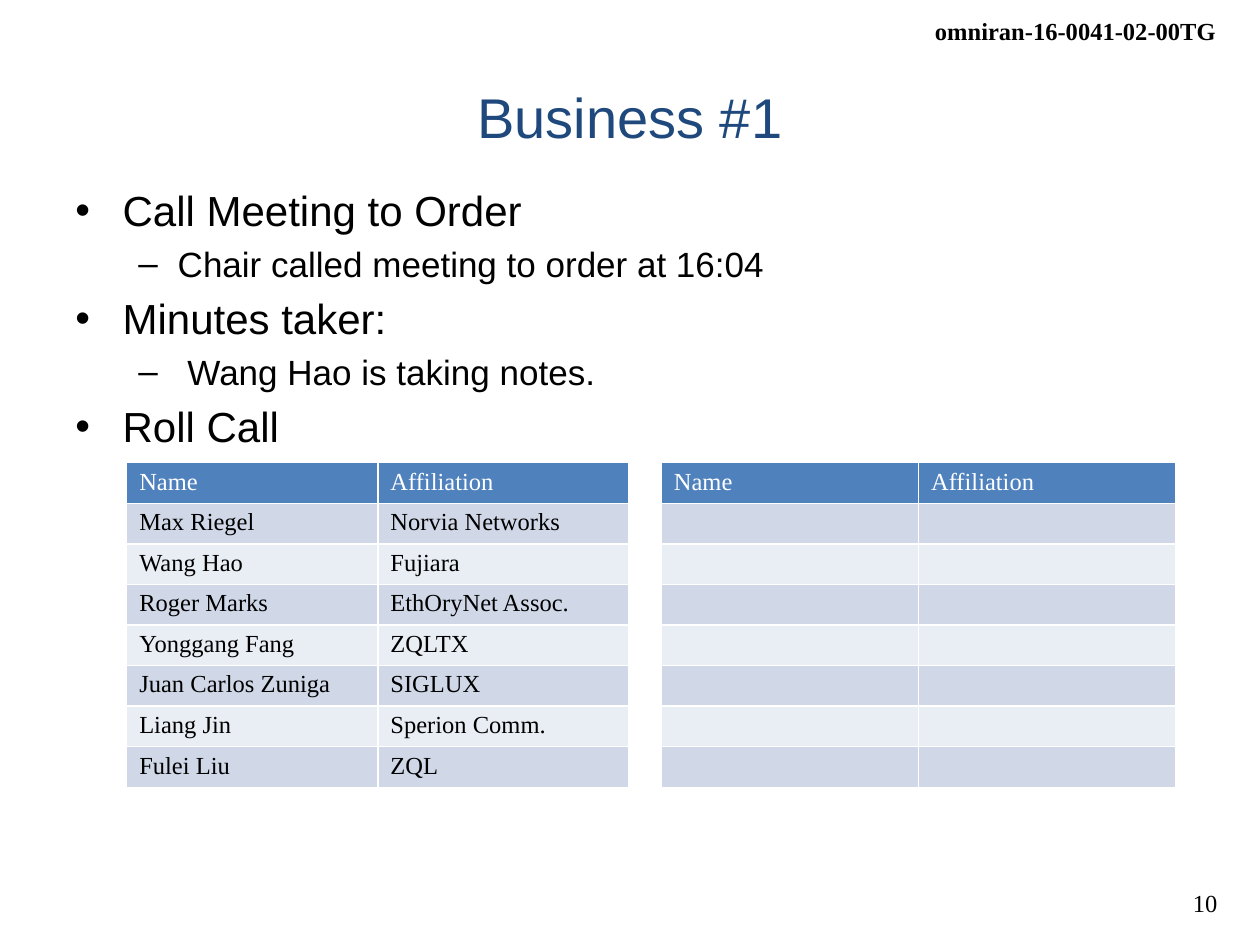
from lxml import etree
from pptx import Presentation
from pptx import util as u
from pptx.dml import color
from pptx.enum import text
from pptx.oxml import ns


def rgb(value):
    return color.RGBColor.from_string(value)


def write(paragraph, content, size=14, font="Times New Roman", fill="000000",
          bold=False, align=text.PP_ALIGN.LEFT):
    paragraph.alignment = align
    run = paragraph.add_run()
    run.text = content
    run.font.size = u.Pt(size)
    run.font.name = font
    run.font.bold = bold
    run.font.color.rgb = rgb(fill)


presentation = Presentation()
presentation.slide_width = u.Pt(720)
presentation.slide_height = u.Pt(540)
slide = presentation.slides.add_slide(presentation.slide_layouts[5])

title = slide.shapes.title
title.left, title.top, title.width, title.height = u.Pt(36), u.Pt(21.6), u.Pt(648), u.Pt(90)
title.text_frame.vertical_anchor = text.MSO_ANCHOR.MIDDLE
write(title.text_frame.paragraphs[0], "Business #1", size=32, font="Arial",
      fill="1F497D", align=text.PP_ALIGN.CENTER)

for content, left, top, width, bold in [
    ("omniran-16-0041-02-00TG", 525.6, 5.8, 176.4, True),
    ("10", 671.8, 504, 31, False),
]:
    box = slide.shapes.add_textbox(u.Pt(left), u.Pt(top), u.Pt(width), u.Pt(24.5))
    box.text_frame.word_wrap = False
    write(box.text_frame.paragraphs[0], content, bold=bold, align=text.PP_ALIGN.RIGHT)

agenda = slide.shapes.add_textbox(u.Pt(36), u.Pt(102.2), u.Pt(648), u.Pt(203.8))
agenda.text_frame.word_wrap = True
levels = [("•", 24, 27, -27), ("–", 20, 58.5, -22.5)]
agenda_items = [
    (0, "Call Meeting to Order"),
    (1, "Chair called meeting to order at 16:04"),
    (0, "Minutes taker:"),
    (1, " Wang Hao is taking notes."),
    (0, "Roll Call"),
]
for index, (level, content) in enumerate(agenda_items):
    frame = agenda.text_frame
    paragraph = frame.add_paragraph() if index else frame.paragraphs[0]
    bullet, size, margin, indent = levels[level]
    paragraph.level = level
    paragraph.space_before = u.Pt(size * 0.2)
    write(paragraph, content, size=size, font="Arial")
    properties = paragraph._p.get_or_add_pPr()
    properties.set("marL", str(u.Pt(margin)))
    properties.set("indent", str(u.Pt(indent)))
    etree.SubElement(properties, ns.qn("a:buFont"), typeface="Arial")
    etree.SubElement(properties, ns.qn("a:buChar"), char=bullet)

attendees = [
    ("Max Riegel", "Norvia Networks"),
    ("Wang Hao", "Fujiara"),
    ("Roger Marks", "EthOryNet Assoc."),
    ("Yonggang Fang", "ZQLTX"),
    ("Juan Carlos Zuniga", "SIGLUX"),
    ("Liang Jin", "Sperion Comm."),
    ("Fulei Liu", "ZQL"),
]
header = ("Name", "Affiliation")
rows = [header + ("",) + header] + [person + ("",) * 3 for person in attendees]
column_widths = [143.5, 143.5, 18.5, 147, 147]
row_height = 22.9
gap_column = 2

roll_call = slide.shapes.add_table(
    len(rows), len(column_widths), u.Pt(72.4), u.Pt(264.4),
    u.Pt(sum(column_widths)), u.Pt(row_height * len(rows))).table
roll_call.first_row = False
roll_call.horz_banding = False
for column, width in zip(roll_call.columns, column_widths):
    column.width = u.Pt(width)

for row_index, contents in enumerate(rows):
    roll_call.rows[row_index].height = u.Pt(row_height)
    row_fill = "4F81BD" if row_index == 0 else ("E9EDF4", "D0D8E8")[row_index % 2]
    for column_index, content in enumerate(contents):
        cell = roll_call.cell(row_index, column_index)
        cell.margin_top = cell.margin_bottom = u.Pt(3.2)
        paragraph = cell.text_frame.paragraphs[0]
        if content:
            write(paragraph, content, fill="000000" if row_index else "FFFFFF")
        else:
            etree.SubElement(paragraph._p, ns.qn("a:endParaRPr"), sz="1400")
        cell_properties = cell._tc.get_or_add_tcPr()
        for side in ("lnL", "lnR", "lnT", "lnB"):
            border = etree.SubElement(cell_properties, ns.qn("a:" + side), w=str(u.Pt(1)))
            border_fill = etree.SubElement(border, ns.qn("a:solidFill"))
            etree.SubElement(border_fill, ns.qn("a:srgbClr"), val="FFFFFF")
        cell.fill.solid()
        cell.fill.fore_color.rgb = rgb("FFFFFF" if column_index == gap_column else row_fill)

presentation.save("out.pptx")
